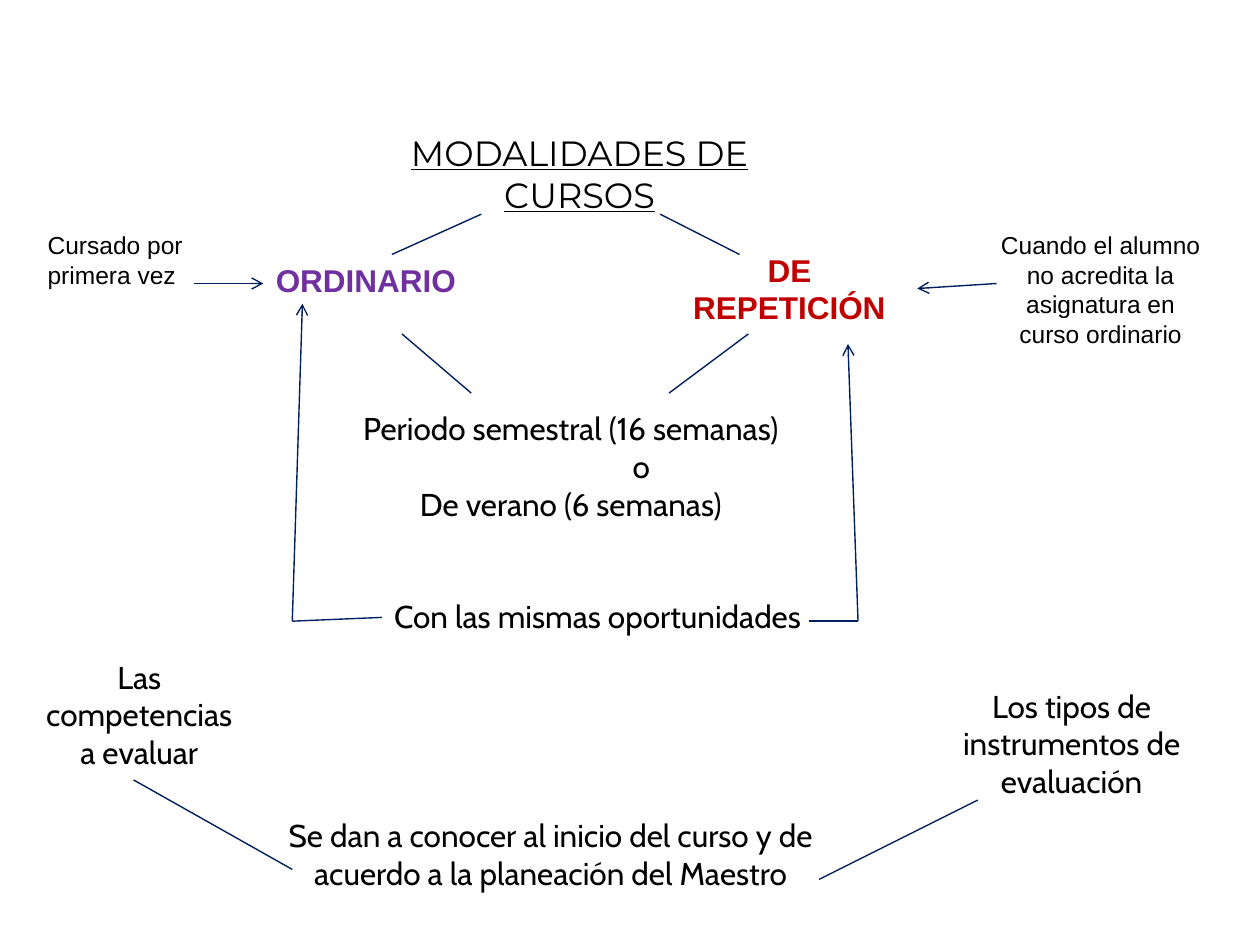
from lxml.etree import SubElement
from pptx import Presentation
from pptx.dml.color import RGBColor
from pptx.enum.shapes import MSO_CONNECTOR
from pptx.enum.text import MSO_ANCHOR, MSO_AUTO_SIZE, PP_ALIGN
from pptx.oxml.ns import qn
from pptx.util import Inches, Pt

BLACK = RGBColor(0x00, 0x00, 0x00)
PURPLE = RGBColor(0x70, 0x30, 0xA0)
RED = RGBColor(0xC0, 0x00, 0x00)
NAVY = RGBColor(0x00, 0x20, 0x60)

LEFT, CENTER = PP_ALIGN.LEFT, PP_ALIGN.CENTER

NOTES = [
    ("Cursado por primera vez", (0.28, 1.78, 1.34, 0.57), LEFT),
    ("Cuando el alumno no acredita la asignatura en curso ordinario",
     (7.83, 1.78, 1.81, 1.04), CENTER),
]
MODES = [
    ("ORDINARIO", (2.09, 2.02, 1.65, 0.4), LEFT, PURPLE),
    ("DE REPETICIÓN", (5.24, 1.94, 2.05, 0.71), CENTER, RED),
]
DETAILS = [
    ("Con las mismas oportunidades", (3.03, 4.69, 4.02, 0.4), LEFT),
    ("Las competencias a evaluar", (0.2, 5.17, 1.81, 1.01), CENTER),
    ("Los tipos de instrumentos de evaluación", (7.52, 5.4, 1.97, 1.01), CENTER),
    ("Se dan a conocer al inicio del curso y de acuerdo a la planeación del Maestro",
     (1.85, 6.43, 5.04, 0.71), CENTER),
]
LINES = [
    (3.82, 1.7, 3.11, 2.02),
    (5.24, 1.7, 5.87, 2.02),
    (3.19, 2.65, 3.74, 3.12),
    (5.94, 2.65, 5.31, 3.12),
    (3.03, 4.9, 2.32, 4.93),
    (6.42, 4.93, 6.81, 4.93),
    (1.06, 6.19, 2.32, 6.9),
    (7.76, 6.35, 6.5, 6.98),
]
ARROWS = [
    (1.54, 2.25, 2.09, 2.25),
    (7.91, 2.25, 7.28, 2.29),
    (2.32, 4.93, 2.4, 2.41),
    (6.81, 4.93, 6.73, 2.73),
]


def write_text(sp, text, font, size, align=CENTER, color=BLACK, bold=False):
    tf = sp.text_frame
    tf.word_wrap = True
    tf.auto_size = MSO_AUTO_SIZE.NONE
    tf.vertical_anchor = MSO_ANCHOR.TOP
    tf.text = text
    for p in tf.paragraphs:
        p.alignment = align
        p.font.name = font
        p.font.size = Pt(size)
        p.font.bold = bold
        p.font.color.rgb = color
    return tf


def add_title(s, text, box):
    sp = s.shapes.title
    sp.left, sp.top, sp.width, sp.height = map(Inches, box)
    tf = write_text(sp, text, "Montserrat", 20)
    tf.paragraphs[0].font.underline = True


def add_text(s, text, box, *style):
    sp = s.shapes.add_textbox(*map(Inches, box))
    return write_text(sp, text, *style)


def add_line(s, ends, arrow=False):
    cx = s.shapes.add_connector(MSO_CONNECTOR.STRAIGHT, *map(Inches, ends))
    cx.line.color.rgb = NAVY
    cx.line.width = Pt(0.79)
    if arrow:
        SubElement(cx.line._get_or_add_ln(), qn("a:tailEnd"), type="arrow")
    SubElement(cx._element.spPr, qn("a:effectLst"))


def main():
    prs = Presentation()
    prs.slide_width, prs.slide_height = Inches(10), Inches(7.5)
    s = prs.slides.add_slide(prs.slide_layouts[5])

    add_title(s, "MODALIDADES DE CURSOS", (2.87, 0.99, 3.46, 0.77))
    for text, box, align in NOTES:
        add_text(s, text, box, "Arial", 14, align)
    for text, box, align, color in MODES:
        add_text(s, text, box, "Arial", 18, align, color, True)
    tf = add_text(s, "Periodo semestral (16 semanas)\no\nDe verano (6 semanas)",
                  (2.01, 3.2, 5.04, 1.01), "Cabin", 18)
    tf.paragraphs[1]._p.get_or_add_pPr().set("marL", str(Inches(1.12)))
    for text, box, align in DETAILS:
        add_text(s, text, box, "Cabin", 18, align)

    for ends in LINES:
        add_line(s, ends)
    for ends in ARROWS:
        add_line(s, ends, arrow=True)

    prs.save("out.pptx")


if __name__ == "__main__":
    main()
